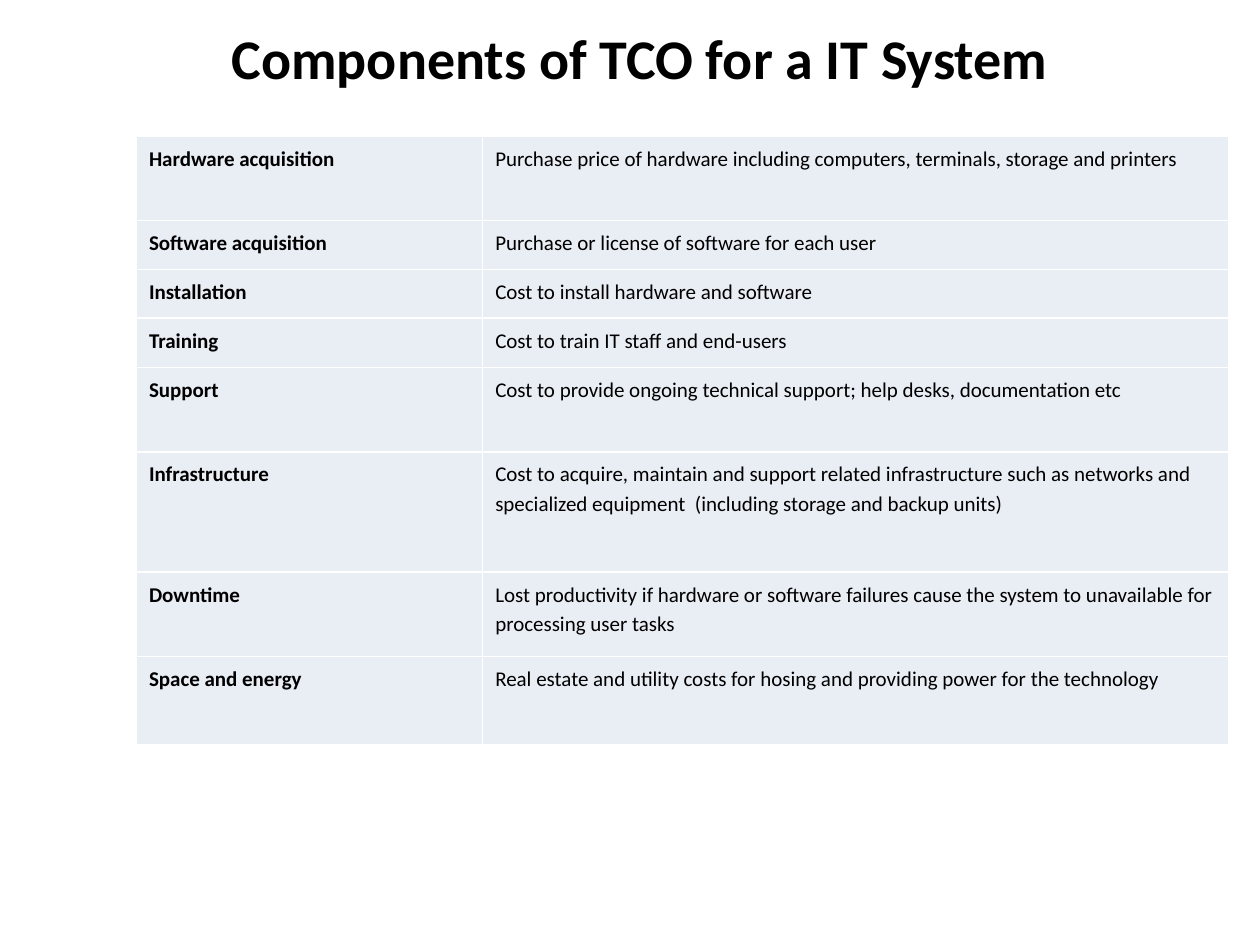
from lxml.etree import SubElement
from pptx import Presentation
from pptx.dml.color import RGBColor
from pptx.enum.text import MSO_VERTICAL_ANCHOR as Anchor, PP_PARAGRAPH_ALIGNMENT as Align
from pptx.oxml.ns import qn
from pptx.util import Cm, Pt

BLACK = RGBColor(0x00, 0x00, 0x00)
WHITE = RGBColor(0xFF, 0xFF, 0xFF)
PALE_BLUE = RGBColor(0xE9, 0xED, 0xF4)

TITLE_FORMAT = {"name": "Calibri", "size": Pt(32), "bold": True}
COMPONENT_FORMAT = {"name": "Calibri", "size": Pt(12), "bold": True}
COST_FORMAT = {"name": "Calibri", "size": Pt(12), "bold": False}

COLUMN_WIDTHS = [6.98, 15.04]
COMPONENTS = [
    (1.7, "Hardware acquisition",
     "Purchase price of hardware including computers, terminals, storage and printers"),
    (0.98, "Software acquisition", "Purchase or license of software for each user"),
    (0.98, "Installation", "Cost to install hardware and software"),
    (1.0, "Training", "Cost to train IT staff and end-users"),
    (1.7, "Support", "Cost to provide ongoing technical support; help desks, documentation etc"),
    (2.42, "Infrastructure",
     "Cost to acquire, maintain and support related infrastructure such as networks and "
     "specialized equipment  (including storage and backup units)"),
    (1.7, "Downtime",
     "Lost productivity if hardware or software failures cause the system to unavailable "
     "for processing user tasks"),
    (1.78, "Space and energy",
     "Real estate and utility costs for hosing and providing power for the technology"),
]


def write(paragraph, text, font_format):
    run = paragraph.add_run()
    run.text = text
    for attribute, value in font_format.items():
        setattr(run.font, attribute, value)
    run.font.color.rgb = BLACK


def add_borders(cell):
    properties = cell._tc.get_or_add_tcPr()
    for position, side in enumerate(("a:lnL", "a:lnR", "a:lnT", "a:lnB")):
        line = SubElement(properties, qn(side), w=str(Pt(1)))
        fill = SubElement(line, qn("a:solidFill"))
        SubElement(fill, qn("a:srgbClr"), val=str(WHITE))
        properties.insert(position, line)


prs = Presentation()
prs.slide_width = Cm(25.4)
prs.slide_height = Cm(19.05)
slide = prs.slides.add_slide(prs.slide_layouts[6])

title = slide.shapes.add_textbox(Cm(1.47), Cm(-0.43), Cm(22.86), Cm(3.18)).text_frame
title.word_wrap = True
title.vertical_anchor = Anchor.MIDDLE
title.paragraphs[0].alignment = Align.CENTER
write(title.paragraphs[0], "Components of TCO for a IT System", TITLE_FORMAT)

cost_table = slide.shapes.add_table(
    len(COMPONENTS), len(COLUMN_WIDTHS), Cm(2.75), Cm(2.75),
    Cm(sum(COLUMN_WIDTHS)), Cm(sum(height for height, *_ in COMPONENTS)),
).table
cost_table.first_row = False
cost_table.horz_banding = False
for column, width in zip(cost_table.columns, COLUMN_WIDTHS):
    column.width = Cm(width)

for row, (height, component, cost) in zip(cost_table.rows, COMPONENTS):
    row.height = Cm(height)
    entries = [(component, COMPONENT_FORMAT), (cost, COST_FORMAT)]
    for cell, (text, font_format) in zip(row.cells, entries):
        cell.fill.solid()
        cell.fill.fore_color.rgb = PALE_BLUE
        add_borders(cell)
        paragraph = cell.text_frame.paragraphs[0]
        paragraph.line_spacing = 1.15
        write(paragraph, text, font_format)

prs.save("out.pptx")
